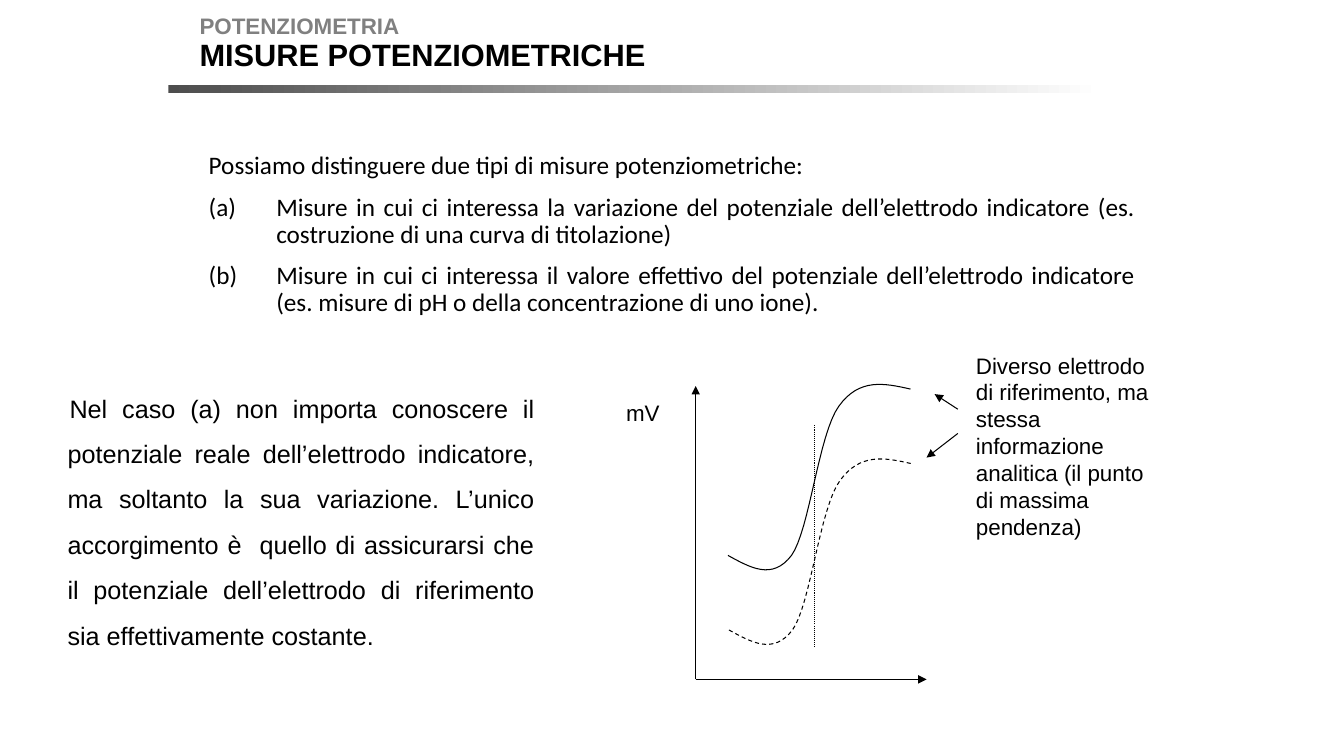
from dataclasses import dataclass

import pptx
import pptx.dml.color
import pptx.enum.dml
import pptx.enum.shapes
import pptx.enum.text
import pptx.oxml
import pptx.oxml.ns
import pptx.util

Inches = pptx.util.Inches
Pt = pptx.util.Pt
DASH = pptx.enum.dml.MSO_LINE
JUSTIFY = pptx.enum.text.PP_ALIGN.JUSTIFY


@dataclass(frozen=True)
class Theme:
    ink: str = "000000"
    muted: str = "808080"
    rule_start: str = "4D4D4D"
    rule_end: str = "FFFFFF"
    heading_font: str = "Arial"
    body_font: str = "Calibri"
    title_size: int = 22
    text_size: int = 18
    label_size: int = 16
    line_width: float = 0.75


THEME = Theme()


def rgb(value):
    return pptx.dml.color.RGBColor.from_string(value)


def add_xml(parent, tag, **attributes):
    element = pptx.oxml.parse_xml(f"<a:{tag} {pptx.oxml.ns.nsdecls('a')}/>")
    for name, value in attributes.items():
        element.set(name, value)
    parent.append(element)


def add_text(slide, box, paragraphs, size, font=THEME.heading_font,
             color=THEME.ink, bold=False, wrap=True):
    """Add a text box and return its paragraphs."""
    frame = slide.shapes.add_textbox(*map(Inches, box)).text_frame
    frame.word_wrap = wrap
    frame.margin_left = frame.margin_right = Inches(0.05)
    frame.margin_top = frame.margin_bottom = Inches(0.05)
    frame.text = "\n".join(paragraphs)
    for paragraph in frame.paragraphs:
        for run in paragraph.runs:
            run.font.name = font
            run.font.size = Pt(size)
            run.font.bold = bold
            run.font.color.rgb = rgb(color)
    return frame.paragraphs


def style_line(shape, dash=None):
    shape.line.color.rgb = rgb(THEME.ink)
    shape.line.width = Pt(THEME.line_width)
    if dash is not None:
        shape.line.dash_style = dash


def add_line(slide, start, end, arrow=True, dash=None):
    line = slide.shapes.add_connector(
        pptx.enum.shapes.MSO_CONNECTOR.STRAIGHT,
        *map(Inches, (*start, *end)))
    style_line(line, dash)
    if arrow:
        add_xml(line.line._get_or_add_ln(), "tailEnd", type="triangle")
    add_xml(line._element.spPr, "effectLst")


def add_header(slide, left, top):
    # Section name, title and fading rule
    add_text(slide, (left + 0.26, top, 2.1, 0.34), ["POTENZIOMETRIA"],
             THEME.label_size, color=THEME.muted, bold=True, wrap=False)
    add_text(slide, (left + 0.26, top + 0.24, 4.54, 0.45),
             ["MISURE POTENZIOMETRICHE"], THEME.title_size, bold=True, wrap=False)
    rule = slide.shapes.add_shape(
        pptx.enum.shapes.MSO_SHAPE.RECTANGLE,
        *map(Inches, (left, top + 0.77, 9.25, 0.08)))
    rule.shadow.inherit = False
    rule.line.fill.background()
    rule.fill.gradient()
    rule.fill.gradient_angle = 0
    for stop, color in zip(rule.fill.gradient_stops,
                           (THEME.rule_start, THEME.rule_end)):
        stop.color.rgb = rgb(color)


def add_measure_types(slide, box):
    # Introduction followed by the lettered list
    paragraphs = add_text(slide, box, [
        "Possiamo distinguere due tipi di misure potenziometriche:",
        "Misure in cui ci interessa la variazione del potenziale dell’elettrodo "
        "indicatore (es. costruzione di una curva di titolazione)",
        "Misure in cui ci interessa il valore effettivo del potenziale "
        "dell’elettrodo indicatore (es. misure di pH o della concentrazione "
        "di uno ione).",
    ], THEME.text_size, font=THEME.body_font)
    for index, paragraph in enumerate(paragraphs):
        paragraph.alignment = JUSTIFY
        paragraph.line_spacing = 0.9
        paragraph.space_before = Pt(10)
        properties = paragraph._p.get_or_add_pPr()
        properties.set("marL", str(Inches(0.67)))
        properties.set("indent", str(Inches(-0.67)))
        if index:
            add_xml(properties, "buAutoNum", type="alphaLcParenBoth")


def add_comment(slide, box):
    # Remark on case (a)
    paragraph = add_text(slide, box, [
        "Nel caso (a) non importa conoscere il potenziale reale dell’elettrodo "
        "indicatore, ma soltanto la sua variazione. L’unico accorgimento è  "
        "quello di assicurarsi che il potenziale dell’elettrodo di riferimento "
        "sia effettivamente costante."], THEME.text_size)[0]
    paragraph.alignment = JUSTIFY
    paragraph.line_spacing = 1.5
    paragraph.space_before = Pt(4)
    paragraph._p.get_or_add_pPr().set("indent", str(Inches(0.02)))


def curve_points(knots, steps=16):
    """Sample the cubic segments that share every third knot."""
    points = [knots[0]]
    for first in range(0, len(knots) - 1, 3):
        segment = knots[first:first + 4]
        for step in range(1, steps + 1):
            t = step / steps
            weights = ((1 - t) ** 3, 3 * t * (1 - t) ** 2,
                       3 * t ** 2 * (1 - t), t ** 3)
            points.append(tuple(
                sum(weight * knot[axis] for weight, knot in zip(weights, segment))
                for axis in (0, 1)))
    return points


def add_titration_curve(slide, left, top, dash=None):
    knots = [(0, 1.7), (0.22, 1.82), (0.44, 1.95), (0.63, 1.7),
             (0.81, 1.45), (0.9, 0.49), (1.1, 0.22),
             (1.3, -0.06), (1.55, -0.01), (1.81, 0.05)]
    points = [(Inches(left + x), Inches(top + y)) for x, y in curve_points(knots)]
    builder = slide.shapes.build_freeform(*points[0])
    builder.add_line_segments(points[1:], close=False)
    curve = builder.convert_to_shape()
    curve.shadow.inherit = False
    curve.fill.background()
    style_line(curve, dash)


def add_diagram(slide, left, top, width, height):
    # Axes
    origin = (left, top + height)
    add_line(slide, origin, (left + width, top + height))
    add_line(slide, origin, (left, top))
    add_text(slide, (left - 0.74, top + 0.08, 0.45, 0.34), ["mV"],
             THEME.label_size, wrap=False)

    # The same curve for two reference electrodes
    add_titration_curve(slide, left + 0.32, top - 0.02)
    add_titration_curve(slide, left + 0.33, top + 0.72, DASH.DASH)

    # Pointers from the note to the curves
    add_line(slide, (left + 2.6, top + 0.23), (left + 2.37, top + 0.08))
    add_line(slide, (left + 2.6, top + 0.47), (left + 2.29, top + 0.71))
    add_text(slide, (left + 2.73, top - 0.39, 1.87, 1.84), [
        "Diverso elettrodo di riferimento, ma stessa informazione analitica "
        "(il punto di massima pendenza)"], THEME.label_size)

    # Point of steepest slope
    add_line(slide, (left + 1.18, top + 0.39), (left + 1.18, top + 2.6),
             arrow=False, dash=DASH.ROUND_DOT)


def main():
    presentation = pptx.Presentation()
    presentation.slide_width = Inches(13.33)
    presentation.slide_height = Inches(7.5)
    slide = presentation.slides.add_slide(presentation.slide_layouts[6])
    add_header(slide, 1.67, 0.07)
    add_measure_types(slide, (2.02, 1.47, 9.29, 2.05))
    add_comment(slide, (0.62, 3.7, 4.73, 2.55))
    add_diagram(slide, 6.9, 3.83, 2.29, 2.91)
    presentation.save("out.pptx")


if __name__ == "__main__":
    main()
